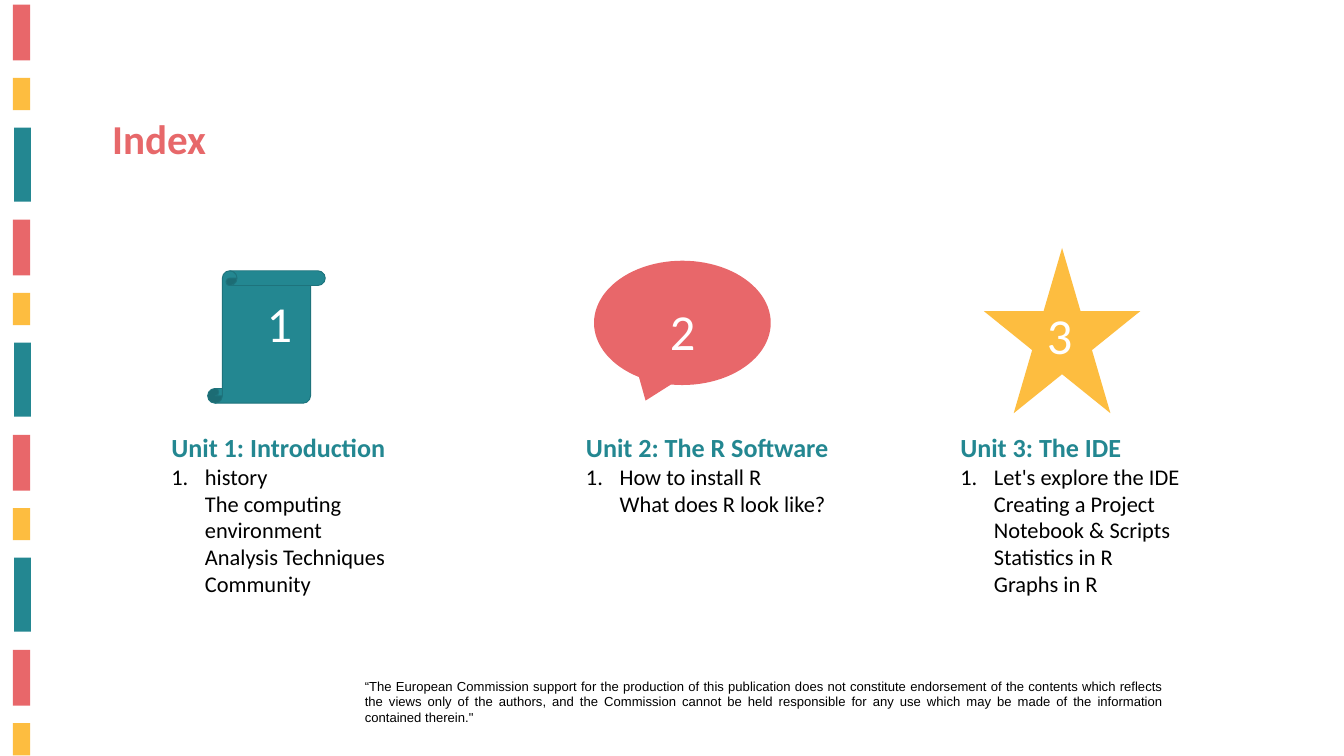
from dataclasses import dataclass

from lxml.etree import SubElement
from pptx import Presentation
from pptx.dml.color import RGBColor
from pptx.enum.shapes import MSO_SHAPE
from pptx.enum.text import MSO_ANCHOR, MSO_AUTO_SIZE, PP_ALIGN
from pptx.oxml.ns import qn
from pptx.util import Inches, Pt

CORAL, YELLOW, TEAL = "E8676A", "FDBD40", "238791"
BLACK, WHITE = "000000", "FFFFFF"
TITLE_FORMAT = {"name": "Calibri", "size": Pt(44), "bold": True}
HEADING_FORMAT = {"name": "Calibri", "size": Pt(28), "bold": True}
LIST_FORMAT = {"name": "Calibri", "size": Pt(24), "bold": False}
NUMBER_FORMAT = {"name": "Calibri", "size": Pt(54)}
DISCLAIMER_FORMAT = {"name": "Arial", "size": Pt(14)}
DISCLAIMER = (
    "“The European Commission support for the production of this publication does not "
    "constitute endorsement of the contents which reflects the views only of the authors, "
    "and the Commission cannot be held responsible for any use which may be made of the "
    "information contained therein.\""
)
STRIPE_PERIOD = 3.2


@dataclass(frozen=True)
class Box:
    left: float
    top: float
    width: float
    height: float

    def lengths(self) -> list:
        return [Inches(value) for value in (self.left, self.top, self.width, self.height)]


@dataclass(frozen=True)
class Stripe:
    box: Box
    color: str


@dataclass(frozen=True)
class Unit:
    number: str
    heading: str
    topics: tuple
    text_box: Box
    icon: MSO_SHAPE
    icon_box: Box
    icon_color: str
    number_box: Box
    outline: str = ""


STRIPES = (
    Stripe(Box(0.19, 0.07, 0.26, 0.83), CORAL),
    Stripe(Box(0.19, 1.16, 0.26, 0.48), YELLOW),
    Stripe(Box(0.21, 1.9, 0.25, 1.1), TEAL),
)

UNITS = (
    Unit("1", "Unit 1: Introduction",
         ("history", "The computing environment", "Analysis Techniques", "Community"),
         Box(2.45, 6.37, 3.59, 3.06), MSO_SHAPE.VERTICAL_SCROLL,
         Box(3.09, 4.03, 1.75, 1.97), TEAL, Box(3.87, 4.3, 1.58, 1.01), "1E737C"),
    Unit("2", "Unit 2: The R Software",
         ("How to install R", "What does R look like?"),
         Box(8.62, 6.37, 4.3, 1.38), MSO_SHAPE.OVAL_CALLOUT,
         Box(8.84, 3.88, 2.63, 1.85), CORAL, Box(9.87, 4.41, 1.08, 1.01)),
    Unit("3", "Unit 3: The IDE",
         ("Let's explore the IDE", "Creating a Project", "Notebook & Scripts",
          "Statistics in R", "Graphs in R"),
         Box(14.19, 6.37, 4.06, 3), MSO_SHAPE.STAR_5_POINT,
         Box(14.64, 3.69, 2.33, 2.46), YELLOW, Box(15.48, 4.47, 1.5, 1.01)),
)


def rgb(color: str) -> RGBColor:
    return RGBColor.from_string(color)


def place(shape, box: Box) -> None:
    shape.left, shape.top, shape.width, shape.height = box.lengths()
    frame_format = {
        "word_wrap": True, "auto_size": MSO_AUTO_SIZE.NONE,
        "vertical_anchor": MSO_ANCHOR.TOP,
        "margin_left": Inches(0.1), "margin_right": Inches(0.1),
        "margin_top": Inches(0.05), "margin_bottom": Inches(0.05),
    }
    for name, value in frame_format.items():
        setattr(shape.text_frame, name, value)


def write(paragraph, text: str, font_format: dict, color: str, alignment=PP_ALIGN.LEFT) -> None:
    paragraph.text = text
    paragraph.alignment = alignment
    paragraph.space_before = Pt(0)
    for run in paragraph.runs:
        for name, value in font_format.items():
            setattr(run.font, name, value)
        run.font.color.rgb = rgb(color)


def remove_bullet(paragraph) -> None:
    properties = paragraph._p.get_or_add_pPr()
    properties.set("marL", "0")
    properties.set("indent", "0")
    SubElement(properties, qn("a:buNone"))


def add_numbering(paragraph) -> None:
    properties = paragraph._p.get_or_add_pPr()
    properties.set("marL", str(Inches(0.5)))
    properties.set("indent", str(-Inches(0.5)))
    bullet_color = SubElement(properties, qn("a:buClr"))
    SubElement(bullet_color, qn("a:srgbClr"), val=BLACK)
    SubElement(properties, qn("a:buFont"), typeface="+mj-lt")
    SubElement(properties, qn("a:buAutoNum"), type="arabicPeriod")


def add_filled_shape(slide, kind: MSO_SHAPE, box: Box, color: str, outline: str = "") -> None:
    shape = slide.shapes.add_shape(kind, *box.lengths())
    shape.shadow.inherit = False
    shape.fill.solid()
    shape.fill.fore_color.rgb = rgb(color)
    if outline:
        shape.line.color.rgb = rgb(outline)
        shape.line.width = Pt(1)
    else:
        shape.line.fill.background()


def add_text(slide, box: Box, text: str, font_format: dict, color: str,
             alignment=PP_ALIGN.LEFT) -> None:
    shape = slide.shapes.add_textbox(*box.lengths())
    place(shape, box)
    write(shape.text_frame.paragraphs[0], text, font_format, color, alignment)


def add_stripes(slide, slide_height: float) -> None:
    offset = 0
    while offset < slide_height:
        for stripe in STRIPES:
            top = stripe.box.top + offset
            if top < slide_height:
                box = Box(stripe.box.left, top, stripe.box.width, stripe.box.height)
                add_filled_shape(slide, MSO_SHAPE.RECTANGLE, box, stripe.color)
        offset += STRIPE_PERIOD


def add_unit(slide, unit: Unit, body) -> None:
    place(body, unit.text_box)
    heading = body.text_frame.paragraphs[0]
    write(heading, unit.heading, HEADING_FORMAT, TEAL)
    remove_bullet(heading)
    topics = body.text_frame.add_paragraph()
    write(topics, "\v".join(unit.topics), LIST_FORMAT, BLACK)
    add_numbering(topics)
    add_filled_shape(slide, unit.icon, unit.icon_box, unit.icon_color, unit.outline)
    add_text(slide, unit.number_box, unit.number, NUMBER_FORMAT, WHITE)


def main() -> None:
    presentation = Presentation()
    presentation.slide_width = Inches(20)
    presentation.slide_height = Inches(11.25)
    slide = presentation.slides.add_slide(presentation.slide_layouts[4])
    title, *bodies = slide.placeholders

    add_stripes(slide, 11.25)
    add_text(slide, Box(5.33, 10.04, 12.08, 0.81), DISCLAIMER, DISCLAIMER_FORMAT, BLACK,
             PP_ALIGN.JUSTIFY)
    place(title, Box(1.57, 1.64, 6.77, 0.84))
    write(title.text_frame.paragraphs[0], "Index", TITLE_FORMAT, "E7686A")
    for unit, body in zip(UNITS, bodies):
        add_unit(slide, unit, body)
    for spare in bodies[len(UNITS):]:
        spare.element.getparent().remove(spare.element)

    presentation.save("out.pptx")


if __name__ == "__main__":
    main()
